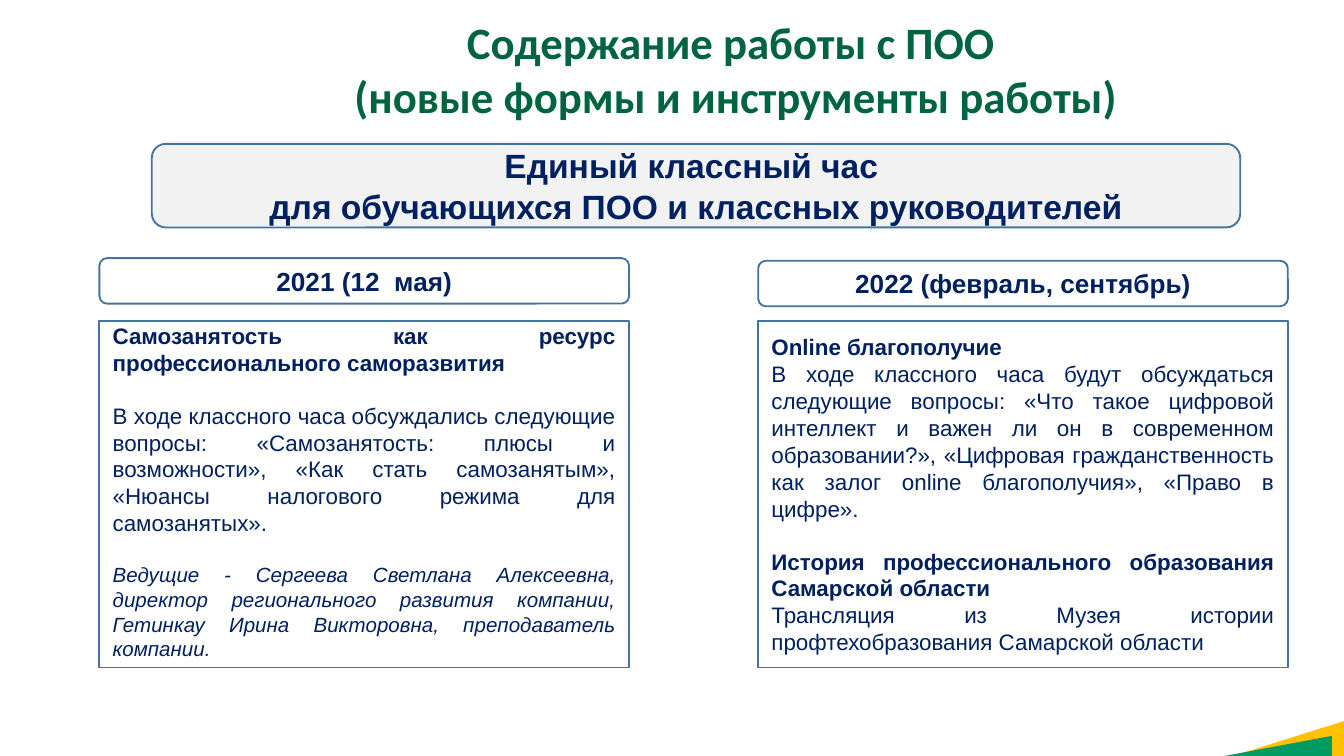
from pptx import Presentation
from pptx.dml.color import RGBColor
from pptx.enum.shapes import MSO_SHAPE
from pptx.enum.text import MSO_ANCHOR, MSO_AUTO_SIZE, PP_ALIGN
from pptx.util import Cm, Pt

COLORS = {
    "title": "006440",
    "text": "002060",
    "border": "43739E",
    "banner": "F2F2F2",
    "white": "FFFFFF",
    "yellow": "FFC000",
    "green": "009B62",
}

COLUMN_W = 10.01
LEFT_X, RIGHT_X = 1.88, 14.33
BODY_Y, BODY_H = 6.07, 6.55

# Each paragraph: text, size, bold, italic, space before
BODY_2021 = [
    ("Самозанятость как ресурс профессионального саморазвития", 12, True, False, 0),
    ("В ходе классного часа обсуждались следующие вопросы: «Самозанятость: "
     "плюсы и возможности», «Как стать самозанятым», «Нюансы налогового "
     "режима для самозанятых».", 12, False, False, 14),
    ("Ведущие - Сергеева Светлана Алексеевна, директор регионального развития "
     "компании, Гетинкау Ирина Викторовна, преподаватель компании.",
     11, False, True, 14),
]
BODY_2022 = [
    ("Online благополучие", 12, True, False, 0),
    ("В ходе классного часа будут обсуждаться следующие вопросы: «Что такое "
     "цифровой интеллект и важен ли он в современном образовании?», «Цифровая "
     "гражданственность как залог online благополучия», «Право в цифре».",
     12, False, False, 0),
    ("История профессионального образования Самарской области", 12, True, False, 14),
    ("Трансляция из Музея истории профтехобразования Самарской области",
     12, False, False, 0),
]


def rgb(name):
    return RGBColor.from_string(COLORS[name])


def add_shape(s, kind, x, y, w, h, fill, border=None):
    sp = s.shapes.add_shape(kind, Cm(x), Cm(y), Cm(w), Cm(h))
    sp.shadow.inherit = False
    sp.fill.solid()
    sp.fill.fore_color.rgb = rgb(fill)
    if border:
        sp.line.color.rgb = rgb(border)
        sp.line.width = Pt(1)
    else:
        sp.line.fill.background()
    return sp


def write(tf, paragraphs, align, anchor, font="Arial", color="text"):
    tf.word_wrap = True
    tf.auto_size = MSO_AUTO_SIZE.NONE
    tf.vertical_anchor = anchor
    for i, (text, size, bold, italic, before) in enumerate(paragraphs):
        p = tf.add_paragraph() if i else tf.paragraphs[0]
        p.alignment = align
        p.space_before = Pt(before)
        r = p.add_run()
        r.text = text
        r.font.name = font
        r.font.size = Pt(size)
        r.font.bold = bold
        r.font.italic = italic
        r.font.color.rgb = rgb(color)


def heading(lines, size):
    return [(line, size, True, False, 0) for line in lines]


def add_title(s, x, y, w, h):
    title = s.shapes.title
    title.left, title.top, title.width, title.height = Cm(x), Cm(y), Cm(w), Cm(h)
    lines = ["Содержание работы с ПОО ", "(новые формы и инструменты работы)"]
    write(title.text_frame, heading(lines, 24), PP_ALIGN.CENTER,
          MSO_ANCHOR.TOP, "Calibri", "title")


def add_label(s, x, y, w, h, lines, size, fill="white"):
    sp = add_shape(s, MSO_SHAPE.ROUNDED_RECTANGLE, x, y, w, h, fill, "border")
    write(sp.text_frame, heading(lines, size), PP_ALIGN.CENTER, MSO_ANCHOR.MIDDLE)


def add_column(s, x, y, w, h, label, label_offset, body, anchor):
    """Bordered text box with its date label above it."""
    sp = add_shape(s, MSO_SHAPE.RECTANGLE, x, y, w, h, "white", "border")
    write(sp.text_frame, body, PP_ALIGN.JUSTIFY, anchor)
    add_label(s, x, y - label_offset, w, 0.86, [label], 14)


def add_corner(s, right, bottom):
    """Two turned triangles; each is given by its visible length and height."""
    for color, length, height, inset in (("yellow", 2.1, 0.66, 0),
                                         ("green", 2.03, 0.38, 0.23)):
        cx, cy = right - inset - length / 2, bottom - height / 2
        sp = add_shape(s, MSO_SHAPE.RIGHT_TRIANGLE, cx - height / 2,
                       cy - length / 2, height, length, color)
        sp.rotation = 270


def main():
    prs = Presentation()
    prs.slide_width, prs.slide_height = Cm(25.4), Cm(14.29)
    s = prs.slides.add_slide(prs.slide_layouts[5])

    # Corner decoration
    add_corner(s, 25.4, 14.29)

    # Title and banner
    add_title(s, 2.69, 0.15, 22.43, 2.31)
    add_label(s, 2.87, 2.72, 20.57, 1.58,
              ["Единый классный час ", "для обучающихся ПОО и классных руководителей"],
              18, "banner")

    # Year columns
    add_column(s, LEFT_X, BODY_Y, COLUMN_W, BODY_H, "2021 (12  мая)", 1.19,
               BODY_2021, MSO_ANCHOR.BOTTOM)
    add_column(s, RIGHT_X, BODY_Y, COLUMN_W, BODY_H, "2022 (февраль, сентябрь)", 1.14,
               BODY_2022, MSO_ANCHOR.MIDDLE)

    prs.save("out.pptx")


if __name__ == "__main__":
    main()
